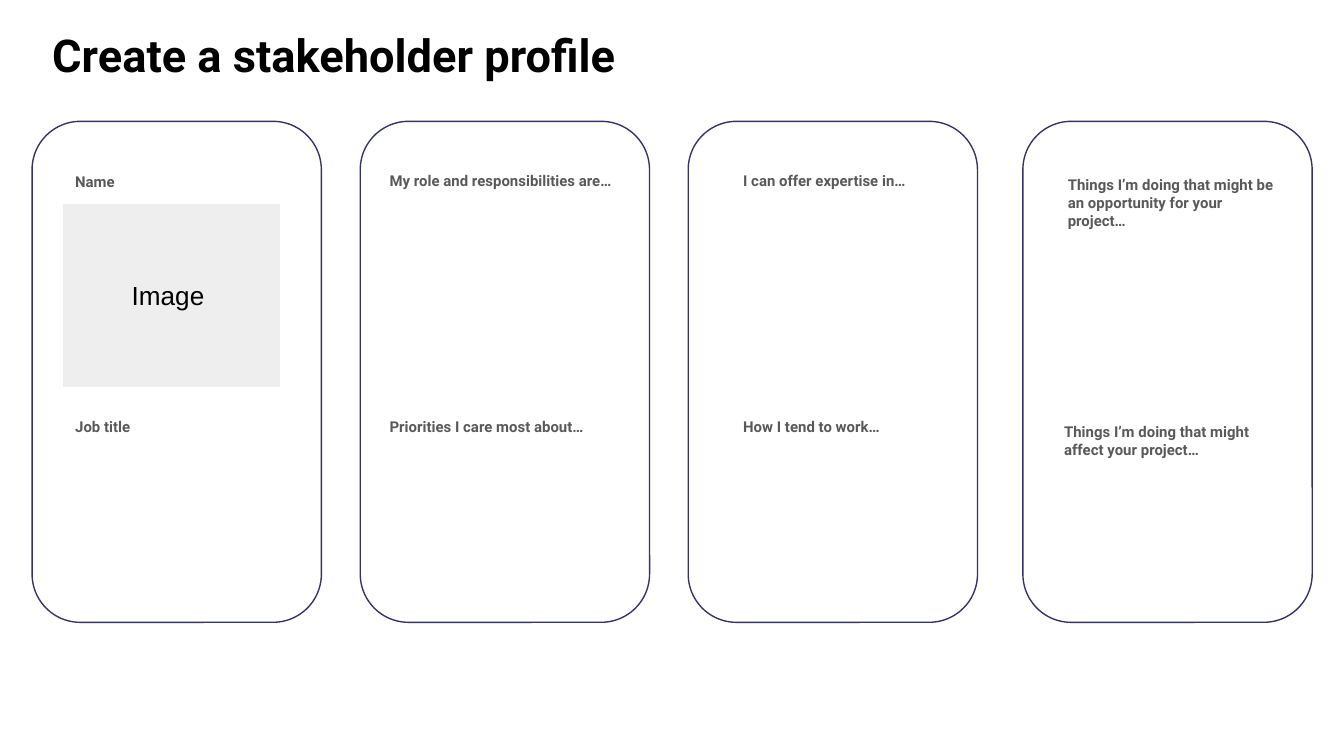
"""Build the stakeholder profile slide with four rounded cards."""
from pptx import Presentation
from pptx.dml.color import RGBColor
from pptx.enum.shapes import MSO_SHAPE
from pptx.enum.text import MSO_ANCHOR, PP_ALIGN
from pptx.util import Pt

WHITE = RGBColor(0xFF, 0xFF, 0xFF)
BLACK = RGBColor(0, 0, 0)
NAVY = RGBColor(0x33, 0x33, 0x66)
GREY = RGBColor(0x59, 0x59, 0x59)
PALE = RGBColor(0xEE, 0xEE, 0xEE)

TITLE = {"name": "Roboto", "size": Pt(24.2), "bold": True}
LABEL = {"name": "Roboto", "size": Pt(8), "bold": True}
IMAGE = {"name": "Arial", "size": Pt(14), "bold": False}
MARGINS = ("margin_left", "margin_top", "margin_right", "margin_bottom")


def write(box, text, color, style, anchor=MSO_ANCHOR.TOP, align=PP_ALIGN.LEFT):
    frame = box.text_frame
    frame.word_wrap = True
    frame.vertical_anchor = anchor
    for margin in MARGINS:
        setattr(frame, margin, Pt(7.2))
    para = frame.paragraphs[0]
    para.alignment = align
    span = para.add_run()
    span.text = text
    span.font.color.rgb = color
    for key, value in style.items():
        setattr(span.font, key, value)


def add_panel(kind, bounds, fill, line):
    panel = page.shapes.add_shape(kind, *map(Pt, bounds))
    panel.shadow.inherit = False
    panel.fill.solid()
    panel.fill.fore_color.rgb = fill
    panel.line.color.rgb = line
    panel.line.width = Pt(0.75)
    return panel


deck = Presentation()
deck.slide_width, deck.slide_height = Pt(720), Pt(405)
page = deck.slides.add_slide(deck.slide_layouts[6])

for left in (17.2, 193, 368.7, 548):
    card = add_panel(MSO_SHAPE.ROUNDED_RECTANGLE, (left, 65, 155, 268.4), WHITE, NAVY)
    card.adjustments[0] = 0.167

photo = add_panel(MSO_SHAPE.RECTANGLE, (33.5, 109, 117, 98.5), PALE, WHITE)
write(photo, "Image ", BLACK, IMAGE, MSO_ANCHOR.MIDDLE, PP_ALIGN.CENTER)

title = page.shapes.add_textbox(Pt(20.9), Pt(7.2), Pt(482.4), Pt(42.5))
write(title, "Create a stakeholder profile", BLACK, TITLE)

UPPER, LOWER = 87, 219
labels = [
    ("Name", 33.2, UPPER + 0.6, 125),
    ("Job title", 33.2, LOWER, 110),
    ("My role and responsibilities are…", 201.6, UPPER, 142.5),
    ("Priorities I care most about…", 201.6, LOWER, 132),
    ("I can offer expertise in…", 391, UPPER, 110),
    ("How I tend to work…", 391, LOWER, 110),
    ("Things I’m doing that might be an opportunity for your project…", 565, UPPER, 125),
    ("Things I’m doing that might affect your project…", 563, LOWER, 125),
]
for text, left, top, width in labels:
    box = page.shapes.add_textbox(Pt(left), Pt(top), Pt(width), Pt(22.3))
    write(box, text, GREY, LABEL)

deck.save("out.pptx")
